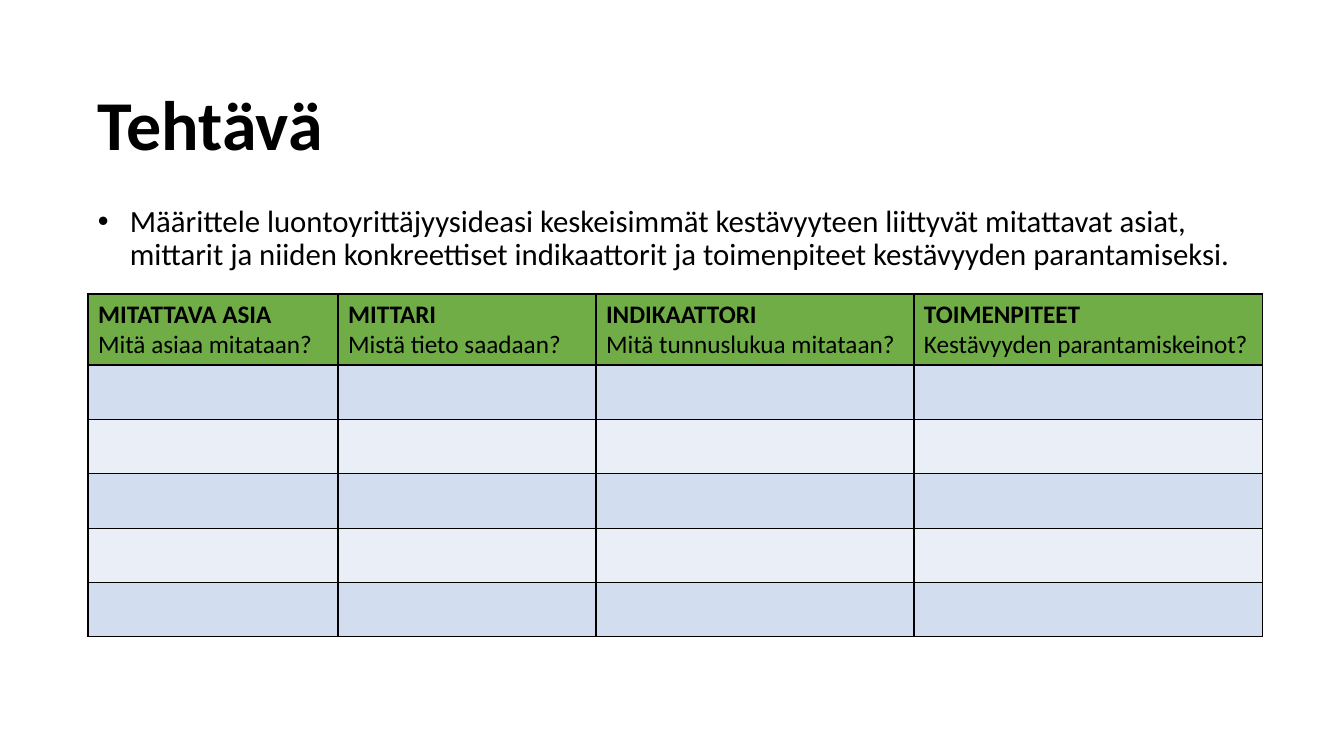
from lxml.etree import SubElement as Sub
from pptx import Presentation
from pptx.dml.color import RGBColor as RGB
from pptx.enum.text import MSO_ANCHOR as Anchor
from pptx.oxml.ns import qn
from pptx.util import Pt

PX = 914400 * 10 // 1008
COLORS = {"text": "000000", "head": "70AD47", "dark": "D2DEEF", "light": "EAEFF7"}
HEADS = [
    ("MITATTAVA ASIA", "Mitä asiaa mitataan?", 250),
    ("MITTARI", "Mistä tieto saadaan?", 258),
    ("INDIKAATTORI", "Mitä tunnuslukua mitataan?", 318),
    ("TOIMENPITEET", "Kestävyyden parantamiskeinot?", 349),
]
LEFT, WIDTH = 88 * PX, 1161 * PX
HEAD, ROWS, BODY = 71 * PX, 5, 272 * PX


def write(para, text, size=18, bold=False):
    run = para.add_run()
    run.text = text
    font = run.font
    font.name, font.size, font.bold = "Calibri", Pt(size), bold
    font.color.rgb = RGB.from_string(COLORS["text"])


def border(cell):
    props = cell._tc.get_or_add_tcPr()
    for i, side in enumerate(("lnL", "lnR", "lnT", "lnB")):
        line = props.makeelement(qn(f"a:{side}"), {"w": str(Pt(1))})
        fill = Sub(line, qn("a:solidFill"))
        Sub(fill, qn("a:srgbClr"), val=COLORS["text"])
        props.insert(i, line)


deck = Presentation()
deck.slide_width, deck.slide_height = 1344 * PX, 756 * PX
slide = deck.slides.add_slide(deck.slide_layouts[6])

title = slide.shapes.add_textbox(LEFT, 84 * PX, WIDTH, 88 * PX).text_frame
title.word_wrap = True
title.vertical_anchor = Anchor.MIDDLE
para = title.paragraphs[0]
para.line_spacing = 0.9
write(para, "Tehtävä", size=50, bold=True)

task = slide.shapes.add_textbox(LEFT, 201 * PX, WIDTH, 434 * PX).text_frame
task.word_wrap = True
para = task.paragraphs[0]
para.line_spacing = 0.9
props = para._p.get_or_add_pPr()
props.set("marL", str(32 * PX))
props.set("indent", str(-32 * PX))
Sub(props, qn("a:buFont"), typeface="Arial")
Sub(props, qn("a:buChar"), char="•")
write(
    para,
    "Määrittele luontoyrittäjyysideasi keskeisimmät kestävyyteen liittyvät "
    "mitattavat asiat, mittarit ja niiden konkreettiset indikaattorit ja "
    "toimenpiteet kestävyyden parantamiseksi.",
    size=22,
)

total = sum(wide for _, _, wide in HEADS) * PX
frame = slide.shapes.add_table(
    ROWS + 1, len(HEADS), LEFT, 294 * PX, total, HEAD + BODY
)
table = frame.table
for col, (name, ask, wide) in enumerate(HEADS):
    table.columns[col].width = wide * PX
    para = table.cell(0, col).text_frame.paragraphs[0]
    write(para, name, bold=True)
    para.add_line_break()
    write(para, ask)

for i, row in enumerate(table.rows):
    row.height = BODY // ROWS if i else HEAD
    tone = ("light", "dark")[i % 2] if i else "head"
    for cell in row.cells:
        cell.fill.solid()
        cell.fill.fore_color.rgb = RGB.from_string(COLORS[tone])
        border(cell)

deck.save("out.pptx")
